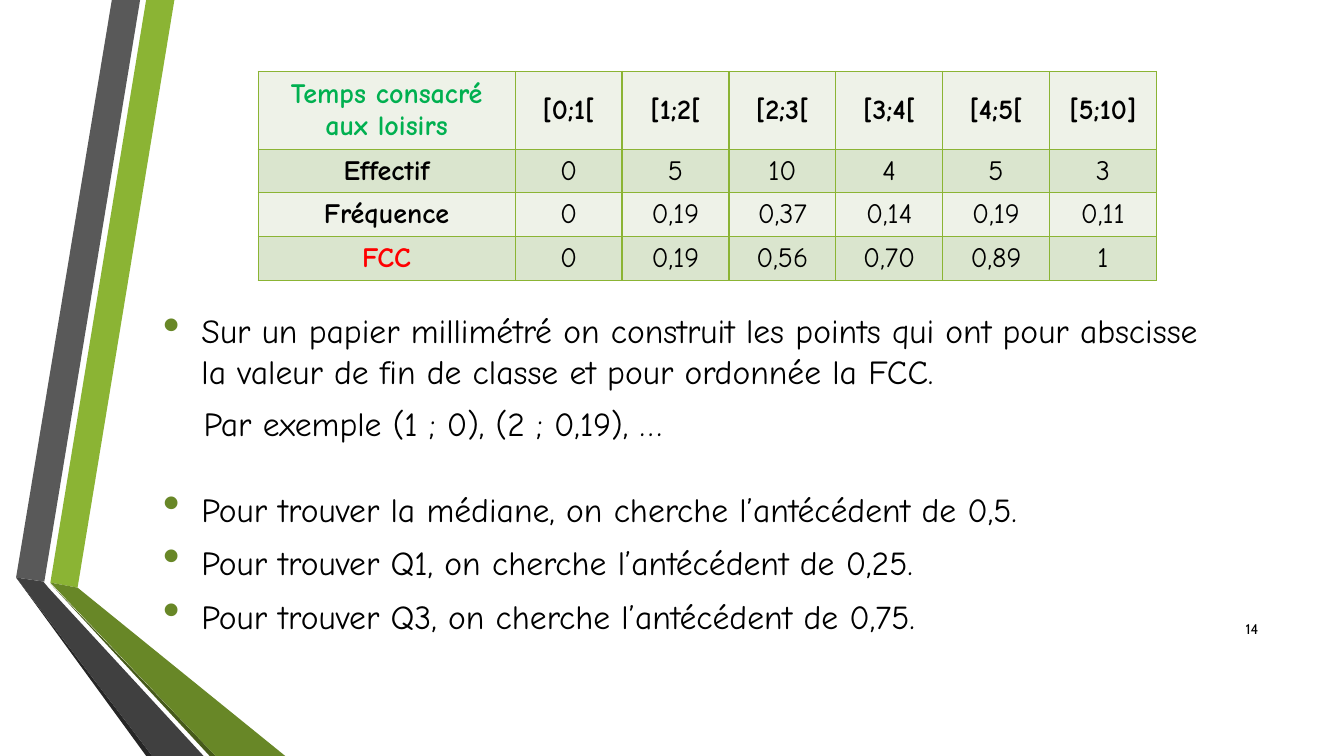
from dataclasses import dataclass

import pptx
import pptx.dml.color
import pptx.enum.text
import pptx.oxml
import pptx.oxml.ns
import pptx.util
from pptx.util import Inches

FONT = "Comic Neue"
BLACK, GREEN, DARK_GREEN = "000000", "8BB434", "688727"
ALIGN = pptx.enum.text.PP_ALIGN
MIDDLE = pptx.enum.text.MSO_ANCHOR.MIDDLE


@dataclass
class Band:
    color: str
    points: list[tuple[float, float]]


@dataclass
class Note:
    text: str
    left: float
    top: float
    height: float = 0.5
    bullet: bool = True


@dataclass
class Row:
    label: str
    values: list[str]
    fill: str
    height: float = 0.43
    label_color: str = BLACK
    bold: bool = False


BANDS = [
    Band(GREEN, [(0.5, 5.78), (0.77, 5.83), (1.73, 0), (1.45, 0)]),
    Band("595959", [(1.39, 0), (1.11, 0), (0.16, 5.73), (0.44, 5.77)]),
    Band("262626", [(0.16, 5.73), (1.45, 7.5), (1.51, 7.5)]),
    Band("465A1A", [(0.5, 5.79), (2.08, 7.5), (2.14, 7.5)]),
    Band(DARK_GREEN, [(0.5, 5.78), (2.14, 7.5), (2.83, 7.5), (0.77, 5.83)]),
    Band("404040", [(2.02, 7.5), (0.48, 5.83), (0.43, 5.77), (0.16, 5.73), (1.51, 7.5)]),
]

LIGHT, SHADED = "EEF2E8", "DAE5CE"
ROWS = [
    Row("Temps consacré aux loisirs", ["[0;1[", "[1;2[", "[2;3[", "[3;4[", "[4;5[", "[5;10]"],
        LIGHT, height=0.77, label_color="00B050", bold=True),
    Row("Effectif", ["0", "5", "10", "4", "5", "3"], SHADED),
    Row("Fréquence", ["0", "0,19", "0,37", "0,14", "0,19", "0,11"], LIGHT),
    Row("FCC", ["0", "0,19", "0,56", "0,70", "0,89", "1"], SHADED, label_color="FF0000"),
]

NOTES = [
    Note("Sur un papier millimétré on construit les points qui ont pour abscisse "
         "la valeur de fin de classe et pour ordonnée la FCC.", 1.52, 3.03, height=0.91),
    Note("Par exemple (1 ; 0), (2 ; 0,19), …", 1.92, 3.95, bullet=False),
    Note("Pour trouver la médiane, on cherche l’antécédent de 0,5.", 1.52, 4.8),
    Note("Pour trouver Q1, on cherche l’antécédent de 0,25.", 1.52, 5.33),
    Note("Pour trouver Q3, on cherche l’antécédent de 0,75.", 1.52, 5.86),
]


def rgb(value: str) -> pptx.dml.color.RGBColor:
    return pptx.dml.color.RGBColor.from_string(value)


def add_run(p, text: str, size: float, color: str = BLACK, bold: bool = False,
            font: str = FONT) -> None:
    r = p.add_run()
    r.text = text
    r.font.name = font
    r.font.size = pptx.util.Pt(size)
    r.font.bold = bold
    r.font.color.rgb = rgb(color)


def add_band(slide, band: Band) -> None:
    points = [(Inches(x), Inches(y)) for x, y in band.points]
    builder = slide.shapes.build_freeform(*points[0], scale=1.0)
    builder.add_line_segments(points[1:], close=True)
    sp = builder.convert_to_shape()
    sp.shadow.inherit = False
    sp.fill.solid()
    sp.fill.fore_color.rgb = rgb(band.color)
    sp.line.fill.background()


def add_xml(parent, xml: str) -> None:
    tag, rest = xml.split(" ", 1)
    ns = pptx.oxml.ns.nsdecls("a")
    parent.append(pptx.oxml.parse_xml(f"<a:{tag} {ns} {rest}"))


def add_bullet(p) -> None:
    pPr = p._p.get_or_add_pPr()
    pPr.set("marL", str(Inches(0.38)))
    pPr.set("indent", str(Inches(-0.38)))
    add_xml(pPr, f'buClr ><a:srgbClr val="{DARK_GREEN}"/></a:buClr>')
    add_xml(pPr, 'buSzPct val="145000"/>')
    add_xml(pPr, 'buChar char="•"/>')


def add_note(slide, note: Note) -> None:
    sp = slide.shapes.add_textbox(Inches(note.left), Inches(note.top),
                                  Inches(10.75), Inches(note.height))
    tf = sp.text_frame
    tf.word_wrap = True
    p = tf.paragraphs[0]
    if note.bullet:
        add_bullet(p)
    add_run(p, note.text, 24)


def fill_cell(cell, text: str, fill: str, color: str, bold: bool) -> None:
    cell.vertical_anchor = MIDDLE
    p = cell.text_frame.paragraphs[0]
    p.alignment = ALIGN.CENTER
    add_run(p, text, 20, color, bold)
    # Borders come before the fill in the cell properties
    tcPr = cell._tc.get_or_add_tcPr()
    for side in ("lnL", "lnR", "lnT", "lnB"):
        add_xml(tcPr, f'{side} w="12700"><a:solidFill><a:srgbClr val="{GREEN}"/>'
                      f'</a:solidFill></a:{side}>')
    cell.fill.solid()
    cell.fill.fore_color.rgb = rgb(fill)


def add_frequency_table(slide, rows: list[Row]) -> None:
    widths = [2.55] + [1.06] * len(rows[0].values)
    frame = slide.shapes.add_table(len(rows), len(widths), Inches(2.56), Inches(0.71),
                                   Inches(sum(widths)), Inches(sum(r.height for r in rows)))
    table = frame.table
    for column, width in zip(table.columns, widths):
        column.width = Inches(width)
    for i, row in enumerate(rows):
        table.rows[i].height = Inches(row.height)
        fill_cell(table.cell(i, 0), row.label, row.fill, row.label_color, True)
        for j, value in enumerate(row.values, start=1):
            fill_cell(table.cell(i, j), value, row.fill, BLACK, row.bold)


def add_page_number(slide, number: str) -> None:
    sp = slide.shapes.add_textbox(Inches(11.98), Inches(6.04), Inches(0.6), Inches(0.4))
    tf = sp.text_frame
    tf.word_wrap = True
    tf.vertical_anchor = MIDDLE
    p = tf.paragraphs[0]
    p.alignment = ALIGN.RIGHT
    add_run(p, number, 10, font="Cabin")


def main() -> None:
    prs = pptx.Presentation()
    prs.slide_width, prs.slide_height = Inches(13.33), Inches(7.5)
    slide = prs.slides.add_slide(prs.slide_layouts[6])

    # Folded ribbons on the left
    for band in BANDS:
        add_band(slide, band)

    # Content
    add_page_number(slide, "14")
    add_frequency_table(slide, ROWS)
    for note in NOTES:
        add_note(slide, note)

    prs.save("out.pptx")


if __name__ == "__main__":
    main()
